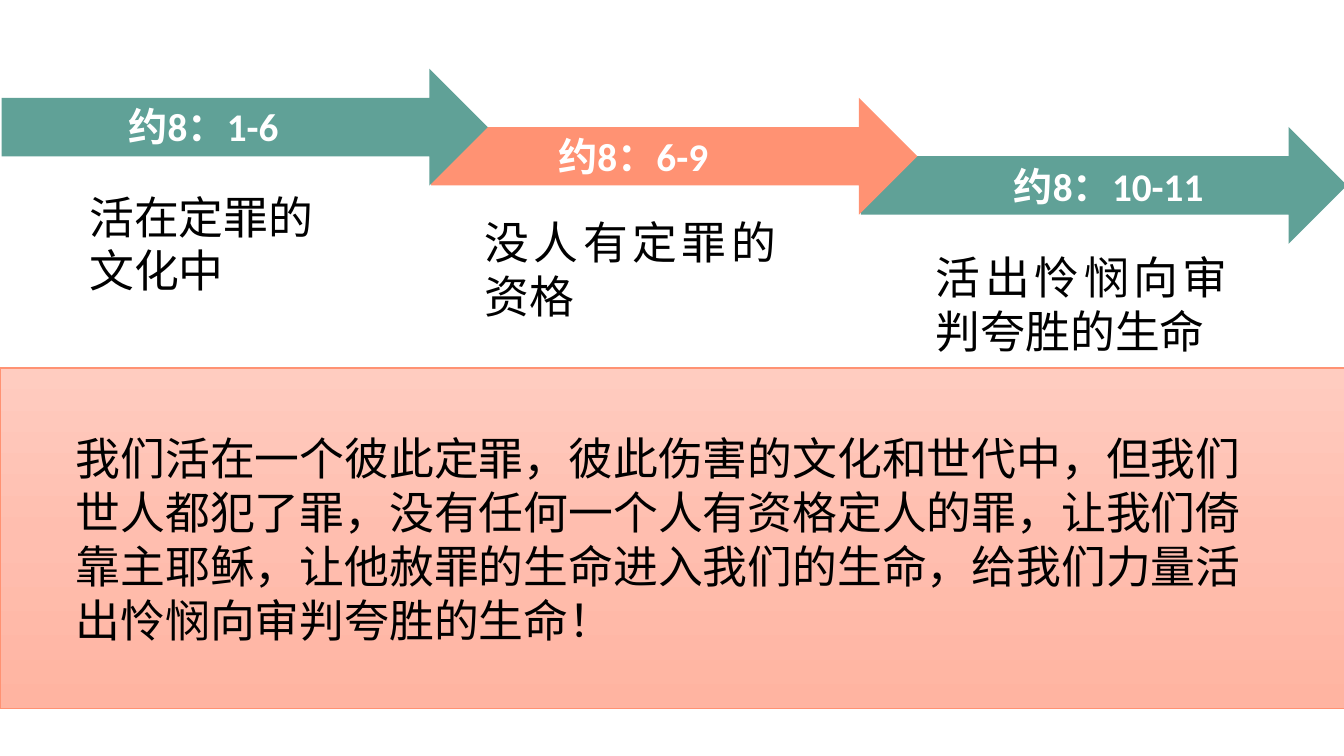
from copy import deepcopy
from lxml.etree import SubElement
from pptx import Presentation
from pptx.dml.color import RGBColor
from pptx.enum.shapes import MSO_SHAPE
from pptx.enum.text import PP_ALIGN
from pptx.oxml.ns import qn
from pptx.util import Cm, Pt

FONT = "Noto Sans CJK SC"


def color(code):
    return RGBColor.from_string(code)


def write(box, lines, size, name, code, bold=False, align=PP_ALIGN.LEFT):
    """Add a text box; Chinese characters always use FONT."""
    frame = slide.shapes.add_textbox(*[Cm(n) for n in box]).text_frame
    frame.word_wrap = True
    frame.margin_left = frame.margin_right = Cm(0.19)
    frame.margin_top = frame.margin_bottom = Cm(0.1)
    frame.text = "\n".join(lines)
    for para in frame.paragraphs:
        para.alignment = align
        font = para.font
        font.size, font.name, font.bold = Pt(size), name, bold
        font.color.rgb = color(code)
        for run in para.runs:
            SubElement(run.font._element, qn("a:ea"), typeface=FONT)


deck = Presentation()
deck.slide_width, deck.slide_height = Cm(25.4), Cm(14.29)
slide = deck.slides.add_slide(deck.slide_layouts[6])

# Arrow colour, label (text, left, width), point (lines, left, top)
steps = [
    ("60A197", ("约8：1-6", 2.24, 3.94), (["活在定罪的", "文化中"], 1.5, 3.48)),
    ("FF9273", ("约8：6-9", 10.36, 4.65), (["没人有定罪的资格"], 8.97, 3.96)),
    ("60A197", ("约8：10-11", 18.97, 4.62), (["活出怜悯向审判夸胜的生命"], 17.5, 4.62)),
]

# Each arrow overlaps the next one, so the last is drawn first
for i, (fill, _, _) in reversed(list(enumerate(steps))):
    arrow = slide.shapes.add_shape(
        MSO_SHAPE.RIGHT_ARROW, Cm(0.03 + 8.12 * i), Cm(1.3 + 0.55 * i), Cm(9.19), Cm(2.21))
    arrow.shadow.inherit = False
    arrow.fill.solid()
    arrow.fill.fore_color.rgb = color(fill)
    arrow.line.fill.background()

for i, (_, (label, left, width), (lines, x, y)) in enumerate(steps):
    write((left, 1.84 + 0.56 * i, width, 1.09), [label], 21, "Calibri", "FFFFFF", bold=True)
    write((x, y, 5.89, 2.24), lines, 24, FONT, "000000", align=PP_ALIGN.JUSTIFY)

panel = slide.shapes.add_shape(MSO_SHAPE.RECTANGLE, 0, Cm(6.96), Cm(25.45), Cm(6.43))
panel.shadow.inherit = False
panel.line.color.rgb = color("FF9273")
panel.line.width = Pt(0.75)
panel.fill.gradient()
panel.fill.gradient_angle = 270
first = panel.fill.gradient_stops[0]._gs
first.addnext(deepcopy(first))
for stop, spot, code in zip(panel.fill.gradient_stops, (0, 0.5, 1), ("FFCCC0", "FFBEAF", "FFB4A1")):
    stop.position = spot
    stop.color.rgb = color(code)

write((1.24, 8.05, 22.89, 4.29), [
    "我们活在一个彼此定罪，彼此伤害的文化和世代中，但我们世人都犯了罪，"
    "没有任何一个人有资格定人的罪，让我们倚靠主耶稣，让他赦罪的生命进入我们的生命，"
    "给我们力量活出怜悯向审判夸胜的生命！"], 24, FONT, "000000")

deck.save("out.pptx")
